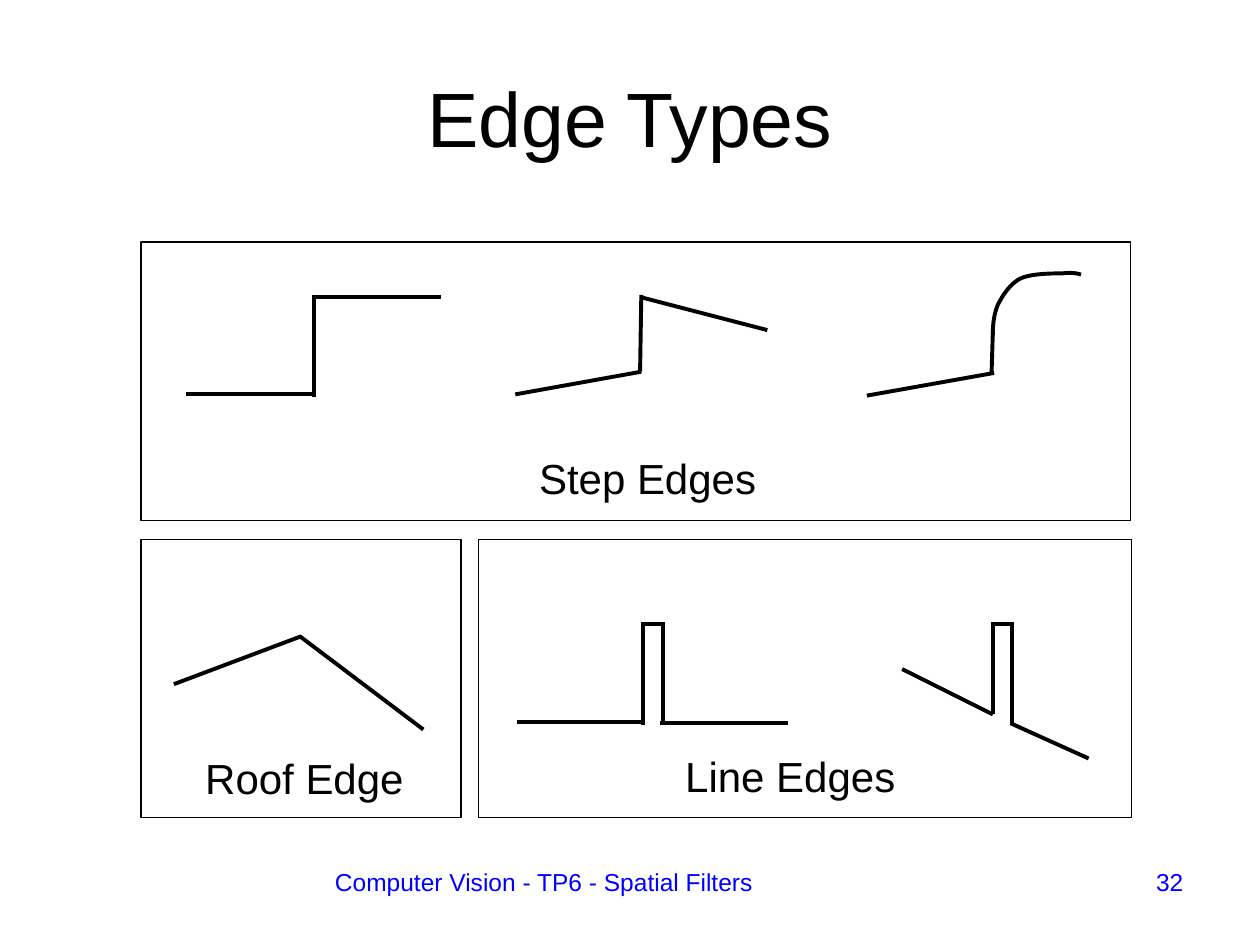
from lxml import etree
from pptx import Presentation
from pptx.dml.color import RGBColor
from pptx.enum.shapes import MSO_CONNECTOR, MSO_SHAPE
from pptx.enum.text import MSO_ANCHOR, PP_ALIGN
from pptx.oxml.ns import qn
from pptx.util import Inches, Pt

STRAIGHT = MSO_CONNECTOR.STRAIGHT
RECTANGLE = MSO_SHAPE.RECTANGLE
LEFT, CENTER, RIGHT = PP_ALIGN.LEFT, PP_ALIGN.CENTER, PP_ALIGN.RIGHT
TOP, MIDDLE = MSO_ANCHOR.TOP, MSO_ANCHOR.MIDDLE
BLACK = RGBColor(0, 0, 0)
BLUE = RGBColor(0, 0, 255)
WHITE = RGBColor(255, 255, 255)
FONT = "Arial"
TITLE_ONLY = 5

# Each profile is a list of straight strokes: x1, y1, x2, y2
PROFILES = {
    "sloped step": [(4.09, 3.13, 5.09, 2.95), (5.09, 2.36, 6.09, 2.62),
                    (5.08, 2.95, 5.09, 2.34)],
    "curved step": [(6.88, 3.14, 7.89, 2.96), (7.87, 2.96, 7.88, 2.63)],
    "roof": [(1.38, 5.43, 2.39, 5.05), (2.38, 5.05, 3.36, 5.79)],
    "flat step": [(1.48, 3.13, 2.49, 3.13), (2.49, 2.36, 3.5, 2.36),
                  (2.49, 3.15, 2.49, 2.34)],
    "flat line": [(4.1, 5.73, 5.11, 5.73), (5.24, 5.74, 6.25, 5.74),
                  (5.1, 5.75, 5.1, 4.94), (5.26, 5.75, 5.26, 4.94),
                  (5.1, 4.95, 5.26, 4.95)],
    "sloped line": [(7.16, 5.31, 7.88, 5.67), (8.02, 5.74, 8.64, 6.02),
                    (7.88, 5.67, 7.88, 4.94), (8.03, 5.74, 8.03, 4.94),
                    (7.87, 4.95, 8.03, 4.95)],
}
# Bezier curve: start point, then two controls and an end for each part
CURVE_START = (7.88, 2.66)
CURVE_PARTS = [
    ((7.88, 2.57), (7.89, 2.49), (7.92, 2.42)),
    ((7.96, 2.34), (8.02, 2.25), (8.1, 2.21)),
    ((8.19, 2.17), (8.35, 2.17), (8.43, 2.17)),
    ((8.51, 2.16), (8.55, 2.17), (8.58, 2.18)),
]
CURVE_STEPS = 10

FRAMES = [(1.12, 1.92, 7.85, 2.21), (3.8, 4.28, 5.18, 2.21),
          (1.12, 4.28, 2.54, 2.21)]
LABELS = [("Step Edges", (4.18, 3.54, 1.93, 0.5)),
          ("Roof Edge", (1.53, 5.92, 1.78, 0.5)),
          ("Line Edges", (5.34, 5.91, 1.87, 0.5))]
FOOTERS = [("Computer Vision - TP6 - Spatial Filters",
            (2.56, 6.83, 6.14, 0.52), LEFT),
           ("32", (8.78, 6.83, 0.71, 0.52), RIGHT)]


def write_text(shape, text, size, color=BLACK, align=LEFT, anchor=TOP, wrap=True):
    frame = shape.text_frame
    frame.word_wrap = wrap
    frame.vertical_anchor = anchor
    paragraph = frame.paragraphs[0]
    paragraph.text = text
    paragraph.alignment = align
    font = paragraph.font
    font.name, font.size, font.color.rgb = FONT, Pt(size), color


def add_text_box(slide, box, text, size, **text_format):
    shape = slide.shapes.add_textbox(*map(Inches, box))
    write_text(shape, text, size, **text_format)


def set_line(shape, width):
    shape.line.color.rgb = BLACK
    shape.line.width = Pt(width)


def add_stroke(shapes, ends):
    connector = shapes.add_connector(STRAIGHT, *map(Inches, ends))
    set_line(connector, 2.25)
    etree.SubElement(connector._element.spPr, qn("a:effectLst"))


def curve_points():
    """Points along the Bezier curve, in EMU, without its start."""
    points, start = [], CURVE_START
    for control_1, control_2, end in CURVE_PARTS:
        for step in range(1, CURVE_STEPS + 1):
            t = step / CURVE_STEPS
            u = 1 - t
            points.append(tuple(
                Inches(u**3 * a + 3 * u * u * t * b + 3 * u * t * t * c + t**3 * d)
                for a, b, c, d in zip(start, control_1, control_2, end)))
        start = end
    return points


def add_curve(shapes):
    builder = shapes.build_freeform(*map(Inches, CURVE_START))
    builder.add_line_segments(curve_points(), close=False)
    curve = builder.convert_to_shape()
    curve.shadow.inherit = False
    curve.fill.background()
    set_line(curve, 2.25)


def add_frame(slide, box):
    frame = slide.shapes.add_shape(RECTANGLE, *map(Inches, box))
    frame.shadow.inherit = False
    frame.fill.background()
    set_line(frame, 0.75)


def main():
    presentation = Presentation()
    presentation.slide_width, presentation.slide_height = Inches(10), Inches(7.5)
    slide = presentation.slides.add_slide(presentation.slide_layouts[TITLE_ONLY])
    slide.background.fill.solid()
    slide.background.fill.fore_color.rgb = WHITE

    title = slide.shapes.title
    title.left, title.top, title.width, title.height = map(
        Inches, (0.5, 0.3, 9, 1.25))
    write_text(title, "Edge Types", 44, align=CENTER, anchor=MIDDLE)

    for name, strokes in PROFILES.items():
        group = slide.shapes.add_group_shape()
        for ends in strokes:
            add_stroke(group.shapes, ends)
        if name == "curved step":
            add_curve(group.shapes)

    for box in FRAMES:
        add_frame(slide, box)
    for text, box in LABELS:
        add_text_box(slide, box, text, 24, wrap=False)
    for text, box, align in FOOTERS:
        add_text_box(slide, box, text, 14, color=BLUE, align=align)

    presentation.save("out.pptx")


if __name__ == "__main__":
    main()
